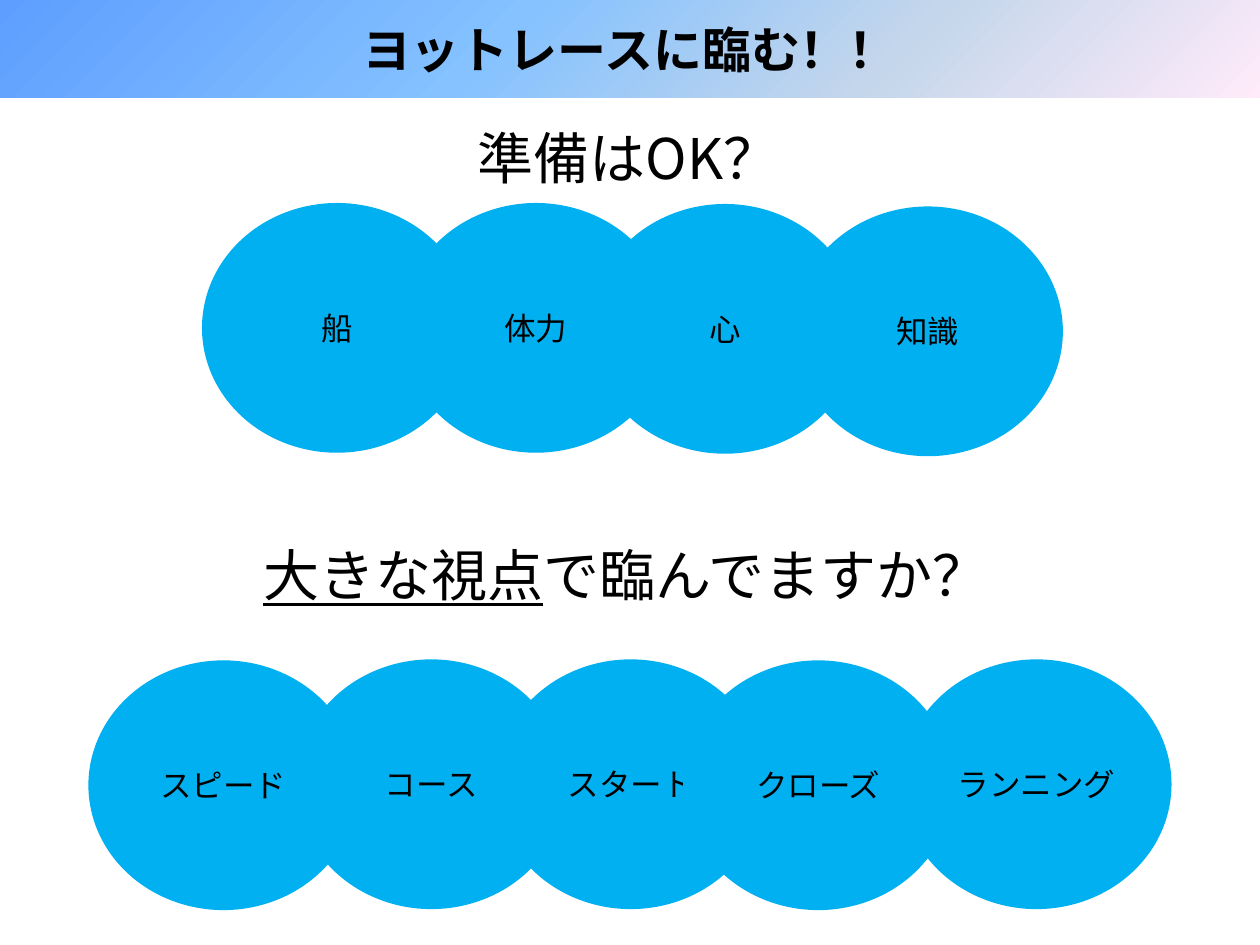
from lxml import etree
from pptx import Presentation
from pptx.dml.color import RGBColor
from pptx.enum.shapes import MSO_SHAPE
from pptx.enum.text import MSO_ANCHOR, MSO_AUTO_SIZE, PP_ALIGN
from pptx.oxml.ns import qn
from pptx.util import Cm, Pt

OVAL = MSO_SHAPE.OVAL
CENTER = PP_ALIGN.CENTER
MIDDLE, TOP = MSO_ANCHOR.MIDDLE, MSO_ANCHOR.TOP
NO_AUTOFIT = MSO_AUTO_SIZE.NONE

# Content
TITLE = "ヨットレースに臨む！！"
READY_QUESTION = ["準備はOK？"]
VIEW_QUESTION = ["大きな視点", "で臨んでますか？"]
# label, left, top in cm
CIRCLES = [
    ("スピード", 1.8, 13.33),
    ("コース", 5.99, 13.31),
    ("スタート", 10.01, 13.31),
    ("クローズ", 13.79, 13.33),
    ("ランニング", 18.19, 13.31),
    ("船", 4.09, 4.11),
    ("体力", 8.1, 4.11),
    ("心", 11.91, 4.13),
    ("知識", 16.0, 4.18),
]

# Style
FONT = "Noto Sans CJK JP"
BLACK, BLUE = "000000", "00B0F0"
BAND_STOPS = [(0, "5E9EFF"), (40, "85C2FF"), (70, "C4D6EB"), (100, "FFEBFA")]
CIRCLE_WIDTH, CIRCLE_HEIGHT = 5.41, 5.0
INDENT = 0.76


def color(hex_string):
    return RGBColor.from_string(hex_string)


def place(shape, left, top, width, height):
    shape.left, shape.top = Cm(left), Cm(top)
    shape.width, shape.height = Cm(width), Cm(height)


def format_text(shape, size, bold=False, anchor=MIDDLE, wrap=True):
    frame = shape.text_frame
    frame.auto_size = NO_AUTOFIT
    frame.word_wrap = wrap
    frame.vertical_anchor = anchor
    for paragraph in frame.paragraphs:
        paragraph.alignment = CENTER
        for run in paragraph.runs:
            run.font.name = FONT
            run.font.size = Pt(size)
            run.font.bold = bold
            run.font.color.rgb = color(BLACK)
            latin = run.font._element.find(qn("a:latin"))
            east_asian = etree.Element(qn("a:ea"), typeface=FONT)
            latin.addnext(east_asian)


def fill_band(shape):
    shape.fill.gradient()
    gradient = shape._element.spPr.find(qn("a:gradFill"))
    stops = gradient.find(qn("a:gsLst"))
    for stop in list(stops):
        stops.remove(stop)
    for position, hex_string in BAND_STOPS:
        stop = etree.SubElement(stops, qn("a:gs"), pos=str(position * 1000))
        etree.SubElement(stop, qn("a:srgbClr"), val=hex_string)
    gradient.find(qn("a:lin")).set("ang", str(45 * 60000))


def write_question(shape, parts):
    paragraph = shape.text_frame.paragraphs[0]
    for part in parts:
        paragraph.add_run().text = part
    paragraph.space_before = Pt(5.8)
    properties = paragraph._p.get_or_add_pPr()
    properties.set("marL", str(Cm(INDENT)))
    properties.set("indent", str(-Cm(INDENT)))
    etree.SubElement(properties, qn("a:buNone"))
    format_text(shape, 32, anchor=TOP)
    return paragraph


presentation = Presentation()
presentation.slide_width, presentation.slide_height = Cm(25.4), Cm(19.05)
slide = presentation.slides.add_slide(presentation.slide_layouts[1])

# Title band
title = slide.shapes.title
place(title, 0, 0, 25.4, 1.96)
title.text_frame.text = TITLE
format_text(title, 28, bold=True, wrap=False)
fill_band(title)

# Question about the wider view
body = slide.placeholders[1]
place(body, 1.83, 10.92, 21.59, 1.75)
view_paragraph = write_question(body, VIEW_QUESTION)
view_paragraph.line_spacing = 0.9
view_paragraph.runs[0].font.underline = True

# Overlapping circles
for label, left, top in CIRCLES:
    circle = slide.shapes.add_shape(
        OVAL, Cm(left), Cm(top), Cm(CIRCLE_WIDTH), Cm(CIRCLE_HEIGHT))
    circle.shadow.inherit = False
    circle.fill.solid()
    circle.fill.fore_color.rgb = color(BLUE)
    circle.line.color.rgb = color(BLUE)
    circle.line.width = Pt(1)
    circle.text_frame.text = label
    format_text(circle, 18)

# Question about preparation
ready = slide.shapes.add_textbox(Cm(1.88), Cm(2.36), Cm(21.59), Cm(1.75))
write_question(ready, READY_QUESTION)

presentation.save("out.pptx")
